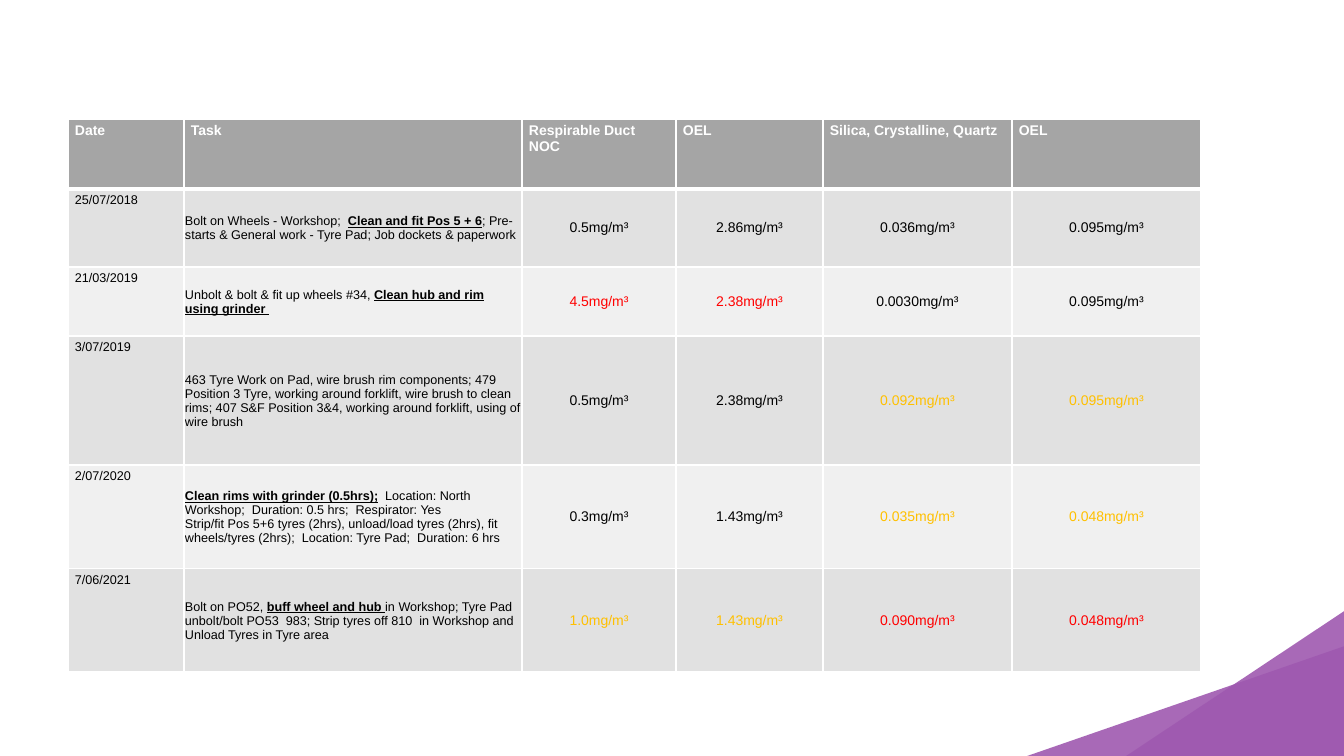
from lxml import etree
from pptx import Presentation
from pptx import util as u
from pptx.dml.color import RGBColor
from pptx.enum import shapes, text
from pptx.oxml import ns

PX = 914400 / 100.8
COLORS = {"purple": "9F59B0", "header": "A5A5A5", "dark": "E1E1E1", "light": "F0F0F0",
          "white": "FFFFFF", "black": "000000", "red": "FF0000", "amber": "FFC000"}


def px(n):
    return u.Emu(round(n * PX))


def fill_cell(cell, content, size=9, color="black", bold=False, align="LEFT",
              anchor="TOP", inset=(7, 4, 7, 4), fill="dark", top=1, bottom=1):
    """Format a cell; text between asterisks becomes bold and underlined."""
    tcPr = cell._tc.get_or_add_tcPr()
    for side, width in zip("LRTB", (1, 1, top, bottom)):
        ln = etree.SubElement(tcPr, ns.qn("a:ln" + side), w=str(u.Pt(width)))
        solid = etree.SubElement(ln, ns.qn("a:solidFill"))
        etree.SubElement(solid, ns.qn("a:srgbClr"), val=COLORS["white"])
    cell.fill.solid()
    cell.fill.fore_color.rgb = RGBColor.from_string(COLORS[fill])
    cell.margin_left, cell.margin_top, cell.margin_right, cell.margin_bottom = map(px, inset)
    cell.vertical_anchor = text.MSO_ANCHOR[anchor]
    tf = cell.text_frame
    for i, line in enumerate(content.split("\n")):
        p = tf.add_paragraph() if i else tf.paragraphs[0]
        p.alignment = text.PP_ALIGN[align]
        for j, part in enumerate(line.split("*")):
            if not part:
                continue
            marked = j % 2 == 1
            r = p.add_run()
            r.text = part
            r.font.name, r.font.size = "Arial", u.Pt(size)
            r.font.bold, r.font.underline = bold or marked, marked
            r.font.color.rgb = RGBColor.from_string(COLORS[color])


prs = Presentation()
prs.slide_width, prs.slide_height = px(1344), px(756)
s = prs.slides.add_slide(prs.slide_layouts[6])

# Purple corner bands
for box, angle in (((844, 376, 818, 1469), 250.9), ((1017, 384, 832, 1335), 236.4)):
    sp = s.shapes.add_shape(shapes.MSO_SHAPE.RECTANGLE, *map(px, box))
    sp.rotation = angle
    sp.shadow.inherit = False
    sp.line.fill.background()
    sp.fill.solid()
    sp.fill.fore_color.rgb = RGBColor.from_string(COLORS["purple"])
    clr = sp._element.spPr.find(".//" + ns.qn("a:srgbClr"))
    etree.SubElement(clr, ns.qn("a:alpha"), val="90000")

# Exposure table
HEADERS = ["Date", "Task", "Respirable Duct NOC", "OEL", "Silica, Crystalline, Quartz", "OEL"]
# date, task, (dust, limit), dust colour, (silica, limit), silica colour
SAMPLES = [
    ("25/07/2018",
     "Bolt on Wheels - Workshop;  *Clean and fit Pos 5 + 6*; Pre-starts & General work"
     " - Tyre Pad; Job dockets & paperwork",
     ("0.5", "2.86"), "black", ("0.036", "0.095"), "black"),
    ("21/03/2019",
     "Unbolt & bolt & fit up wheels #34, *Clean hub and rim using grinder *",
     ("4.5", "2.38"), "red", ("0.0030", "0.095"), "black"),
    ("3/07/2019",
     "463 Tyre Work on Pad, wire brush rim components; 479 Position 3 Tyre, working around"
     " forklift, wire brush to clean rims; 407 S&F Position 3&4, working around forklift,"
     " using of wire brush",
     ("0.5", "2.38"), "black", ("0.092", "0.095"), "amber"),
    ("2/07/2020",
     "*Clean rims with grinder (0.5hrs);*  Location: North Workshop;  Duration: 0.5 hrs;"
     "  Respirator: Yes\n"
     "Strip/fit Pos 5+6 tyres (2hrs), unload/load tyres (2hrs), fit wheels/tyres (2hrs);"
     "  Location: Tyre Pad;  Duration: 6 hrs",
     ("0.3", "1.43"), "black", ("0.035", "0.048"), "amber"),
    ("7/06/2021",
     "Bolt on PO52, *buff wheel and hub *in Workshop; Tyre Pad unbolt/bolt PO53  983;"
     " Strip tyres off 810  in Workshop and Unload Tyres in Tyre area",
     ("1.0", "1.43"), "amber", ("0.090", "0.048"), "red"),
]
COLS = [116, 338, 154, 147, 189, 189]
ROWS = [70, 78, 69, 129, 104, 103]

table = s.shapes.add_table(len(ROWS), len(COLS), px(68), px(119),
                           px(sum(COLS)), px(sum(ROWS))).table
for col, width in zip(table.columns, COLS):
    col.width = px(width)
for row, height in zip(table.rows, ROWS):
    row.height = px(height)

for c, header in enumerate(HEADERS):
    fill_cell(table.cell(0, c), header, size=10, color="white", bold=True,
              fill="header", bottom=3)
for i, (date, task, dust, dust_color, silica, silica_color) in enumerate(SAMPLES, 1):
    look = {"fill": "dark" if i % 2 else "light", "top": 3 if i == 1 else 1}
    fill_cell(table.cell(i, 0), date, **look)
    fill_cell(table.cell(i, 1), task, anchor="MIDDLE", inset=(1, 1, 1, 0), **look)
    for c, value in enumerate(dust + silica, 2):
        fill_cell(table.cell(i, c), value + "mg/m³", size=10, align="CENTER", anchor="MIDDLE",
                  color=dust_color if c < 4 else silica_color, **look)

prs.save("out.pptx")
